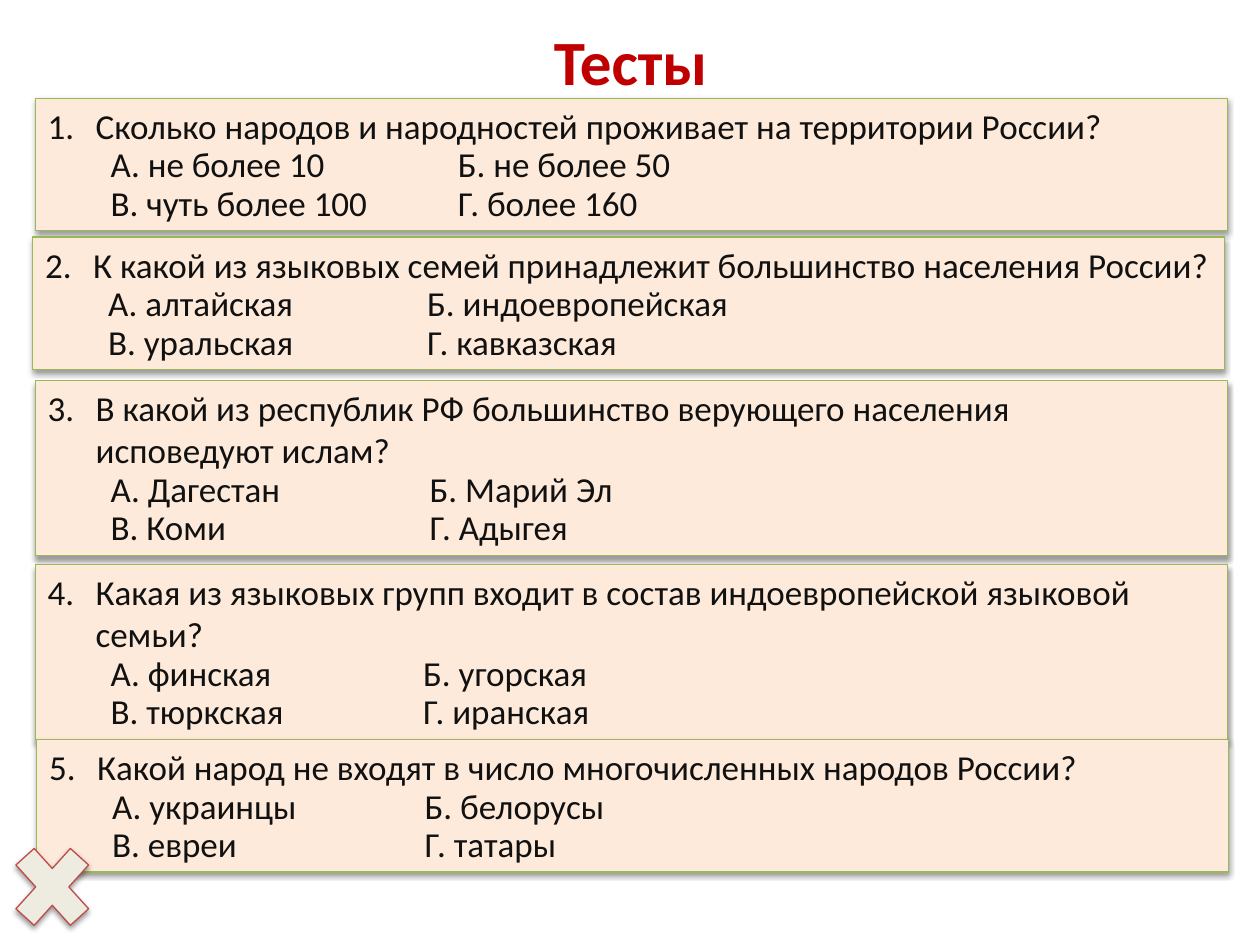
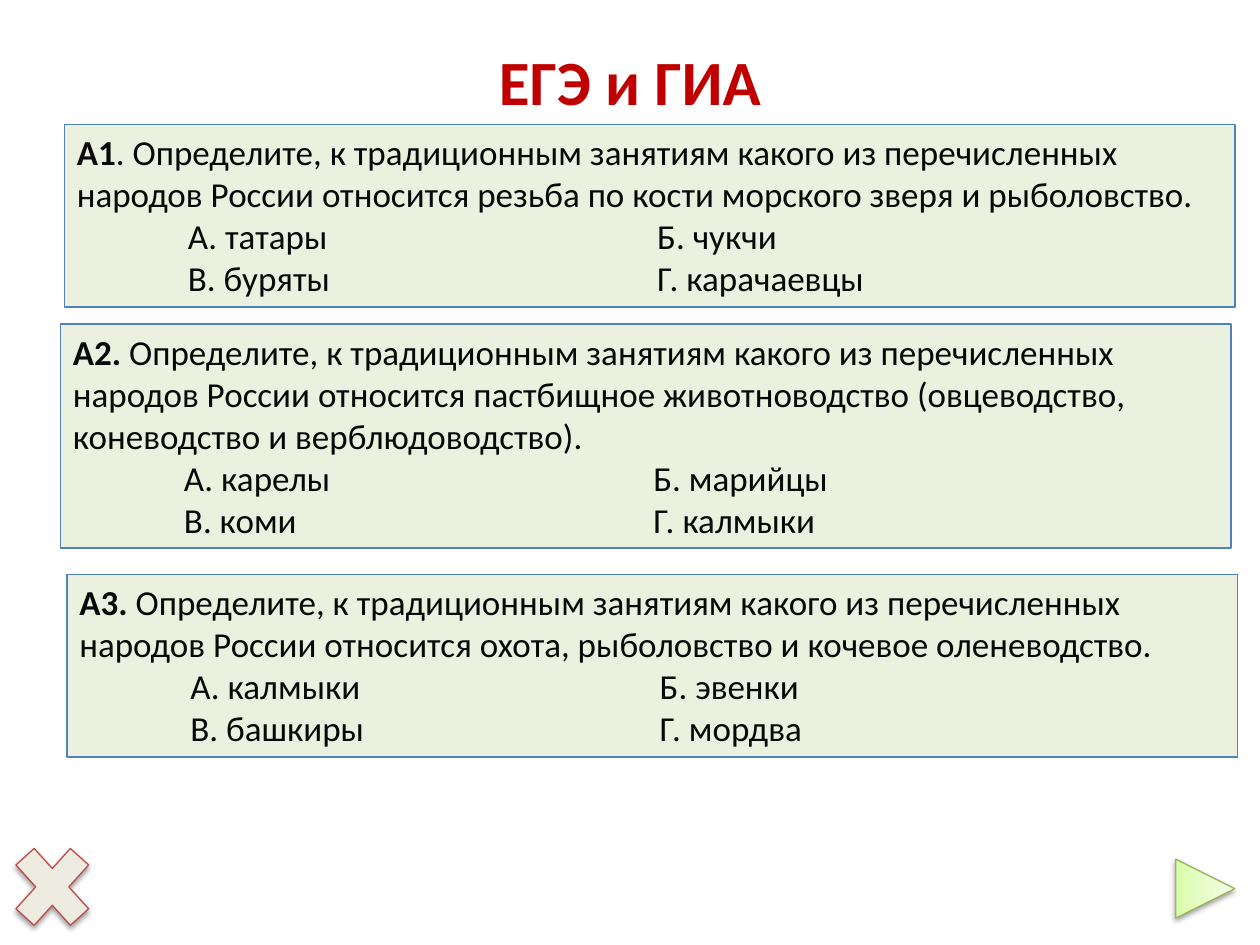
from pptx import Presentation
from pptx.dml.color import RGBColor
from pptx.enum.shapes import MSO_SHAPE
from pptx.enum.text import MSO_ANCHOR, PP_ALIGN
from pptx.oxml.ns import qn
from pptx.util import Cm, Pt
from lxml import etree
from copy import deepcopy

RECTANGLE = MSO_SHAPE.RECTANGLE
CROSS = MSO_SHAPE.MATH_MULTIPLY
TRIANGLE = MSO_SHAPE.ISOSCELES_TRIANGLE
TOP, MIDDLE = MSO_ANCHOR.TOP, MSO_ANCHOR.MIDDLE
LEFT, CENTER = PP_ALIGN.LEFT, PP_ALIGN.CENTER

FONT = "Calibri"
COLORS = {
    "title": "C00000", "test_text": "111111", "exam_text": "080808",
    "test_fill": "FDEADA", "exam_fill": "EBF1DE",
    "green_line": "98B955", "blue_line": "4F81BD",
    "cross_fill": "EEECE1", "cross_line": "BF4C48",
    "arrow_dark": "DAFDA7", "arrow_middle": "E4FCC2", "arrow_light": "F5FFE7",
}

# Boxes are left, top, width, height in centimetres
CROSS_BOX = (0, 16.71, 2.11, 2.34)
ARROW_BOX = (23.7, 17.32, 1.19, 1.19)
TEST_WIDTH, EXAM_WIDTH = 24.03, 23.6
NUMBER_INDENT = 0.97
TEST_OPTION, EXAM_OPTION, EXAM_SECOND_OPTION = 1.27, 2.24, 11.7

# left, top, height, second option column, question, option rows
TESTS = [
    (0.71, 1.98, 2.67, 8.27,
     "Сколько народов и народностей проживает на территории России?",
     [("А. не более 10", "Б. не более 50"), ("В. чуть более 100", "Г. более 160")]),
    (0.66, 4.78, 2.67, 7.7,
     "К какой из языковых семей принадлежит большинство населения России?",
     [("А. алтайская", "Б. индоевропейская"), ("В. уральская", "Г. кавказская")]),
    (0.71, 7.67, 3.53, 7.7,
     "В какой из республик РФ большинство верующего населения\vисповедуют ислам?",
     [("А. Дагестан", "Б. Марий Эл"), ("В. Коми", "Г. Адыгея")]),
    (0.71, 11.38, 3.53, 7.57,
     "Какая из языковых групп входит в состав индоевропейской языковой семьи?",
     [("А. финская", "Б. угорская"), ("В. тюркская", "Г. иранская")]),
    (0.74, 14.91, 2.67, 7.57,
     "Какой народ не входят в число многочисленных народов России?",
     [("А. украинцы", "Б. белорусы"), ("В. евреи", "Г. татары")]),
]

# left, top, height, bold label, rest of the question, option rows
EXAM_QUESTION = ("Определите, к традиционным занятиям какого из перечисленных "
                 "народов России относится ")
EXAMS = [
    (1.3, 2.51, 3.68, "А1", ". " + EXAM_QUESTION
     + "резьба по кости морского зверя и рыболовство.",
     [("А. татары", "Б. чукчи"), ("В. буряты", "Г. карачаевцы")]),
    (1.22, 6.53, 4.52, "А2. ", EXAM_QUESTION
     + "пастбищное животноводство (овцеводство, коневодство и верблюдоводство).",
     [("А. карелы", "Б. марийцы"), ("В. коми", "Г. калмыки")]),
    (1.35, 11.58, 3.68, "А3. ", EXAM_QUESTION
     + "охота, рыболовство и кочевое оленеводство.",
     [("А. калмыки", "Б. эвенки"), ("В. башкиры", "Г. мордва")]),
]


def color(name):
    return RGBColor.from_string(COLORS[name])


def format_runs(paragraph, size, color_name, bold=False):
    for run in paragraph.runs:
        run.font.name = FONT
        run.font.size = Pt(size)
        run.font.bold = bold
        run.font.color.rgb = color(color_name)


def add_shadow(shape):
    effects = shape._element.spPr.find(qn("a:effectLst"))
    shadow = etree.SubElement(effects, qn("a:outerShdw"), blurRad=str(Pt(3.1)),
                              dist=str(Pt(1.6)), dir="5400000", rotWithShape="0")
    black = etree.SubElement(shadow, qn("a:srgbClr"), val="000000")
    etree.SubElement(black, qn("a:alpha"), val="38000")


def add_outlined_shape(slide, kind, box, fill, line, shadow=True):
    shape = slide.shapes.add_shape(kind, *map(Cm, box))
    shape.shadow.inherit = False
    if shadow:
        add_shadow(shape)
    if fill:
        shape.fill.solid()
        shape.fill.fore_color.rgb = color(fill)
    shape.line.color.rgb = color(line)
    shape.line.width = Pt(0.75)
    return shape


def prepare_text(shape, anchor):
    frame = shape.text_frame
    frame.word_wrap = True
    frame.vertical_anchor = anchor
    return frame


def add_title(slide, box, text):
    frame = prepare_text(slide.shapes.add_textbox(*map(Cm, box)), MIDDLE)
    frame.text = text
    frame.paragraphs[0].alignment = CENTER
    format_runs(frame.paragraphs[0], 36, "title", bold=True)


def add_option_rows(frame, rows, columns, color_name, spacing=None):
    for row in rows:
        paragraph = frame.add_paragraph()
        paragraph.text = "".join("\t" + option for option in row)
        tabs = etree.SubElement(paragraph._p.get_or_add_pPr(), qn("a:tabLst"))
        for column in columns:
            etree.SubElement(tabs, qn("a:tab"), pos=str(Cm(column)), algn="l")
        paragraph.alignment = LEFT
        if spacing:
            paragraph.line_spacing = Pt(spacing)
        format_runs(paragraph, 20, color_name)


def add_test(slide, number, left, top, height, second_column, question, rows):
    shape = add_outlined_shape(slide, RECTANGLE, (left, top, TEST_WIDTH, height),
                               "test_fill", "green_line")
    frame = prepare_text(shape, TOP)
    frame.text = question
    paragraph = frame.paragraphs[0]
    paragraph.alignment = LEFT
    # Hanging automatic number
    properties = paragraph._p.get_or_add_pPr()
    properties.set("marL", str(Cm(NUMBER_INDENT)))
    properties.set("indent", str(-Cm(NUMBER_INDENT)))
    etree.SubElement(properties, qn("a:buFont"), typeface="+mj-lt")
    etree.SubElement(properties, qn("a:buAutoNum"), type="arabicPeriod",
                     startAt=str(number))
    format_runs(paragraph, 20, "test_text")
    add_option_rows(frame, rows, (TEST_OPTION, second_column), "test_text", 22)


def add_exam(slide, left, top, height, label, question, rows):
    shape = add_outlined_shape(slide, RECTANGLE, (left, top, EXAM_WIDTH, height),
                               "exam_fill", "blue_line", shadow=False)
    frame = prepare_text(shape, TOP)
    paragraph = frame.paragraphs[0]
    paragraph.alignment = LEFT
    for text in (label, question):
        paragraph.add_run().text = text
    format_runs(paragraph, 20, "exam_text")
    paragraph.runs[0].font.bold = True
    add_option_rows(frame, rows, (EXAM_OPTION, EXAM_SECOND_OPTION), "exam_text")


def add_cross(slide):
    cross = add_outlined_shape(slide, CROSS, CROSS_BOX, "cross_fill", "cross_line")
    cross.adjustments[0] = 0.235


def add_next_arrow(slide):
    arrow = add_outlined_shape(slide, TRIANGLE, ARROW_BOX, None, "green_line")
    arrow.rotation = 90
    arrow.fill.gradient()
    arrow.fill.gradient_angle = 90
    # A third stop between the two default ones
    first_stop = arrow._element.spPr.find(".//" + qn("a:gs"))
    first_stop.addnext(deepcopy(first_stop))
    stops = [(0, "arrow_dark"), (0.35, "arrow_middle"), (1, "arrow_light")]
    for stop, (position, name) in zip(arrow.fill.gradient_stops, stops):
        stop.position = position
        stop.color.rgb = color(name)


def build_test_slide(slide):
    add_title(slide, (0.51, 0.56, 24.41, 1.3), "Тесты")
    for number, test in enumerate(TESTS, start=1):
        add_test(slide, number, *test)
    add_cross(slide)


def build_exam_slide(slide):
    add_title(slide, (1.27, 0.33, 22.86, 2.59), "ЕГЭ и ГИА")
    for exam in EXAMS:
        add_exam(slide, *exam)
    add_cross(slide)
    add_next_arrow(slide)


def main():
    presentation = Presentation()
    presentation.slide_width = Cm(25.4)
    presentation.slide_height = Cm(19.05)
    blank = presentation.slide_layouts[6]
    for build in (build_test_slide, build_exam_slide):
        build(presentation.slides.add_slide(blank))
    presentation.save("out.pptx")


if __name__ == "__main__":
    main()
